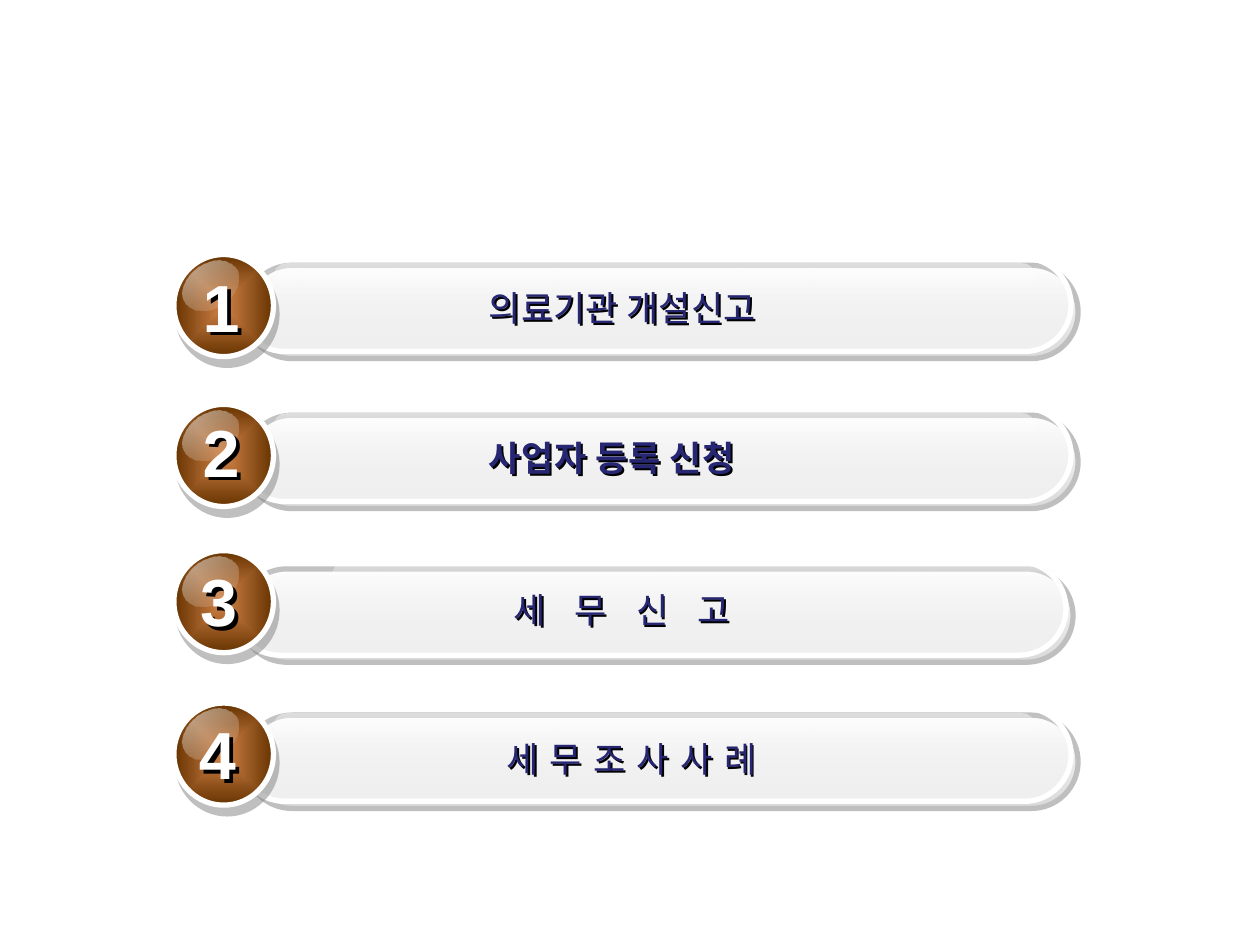
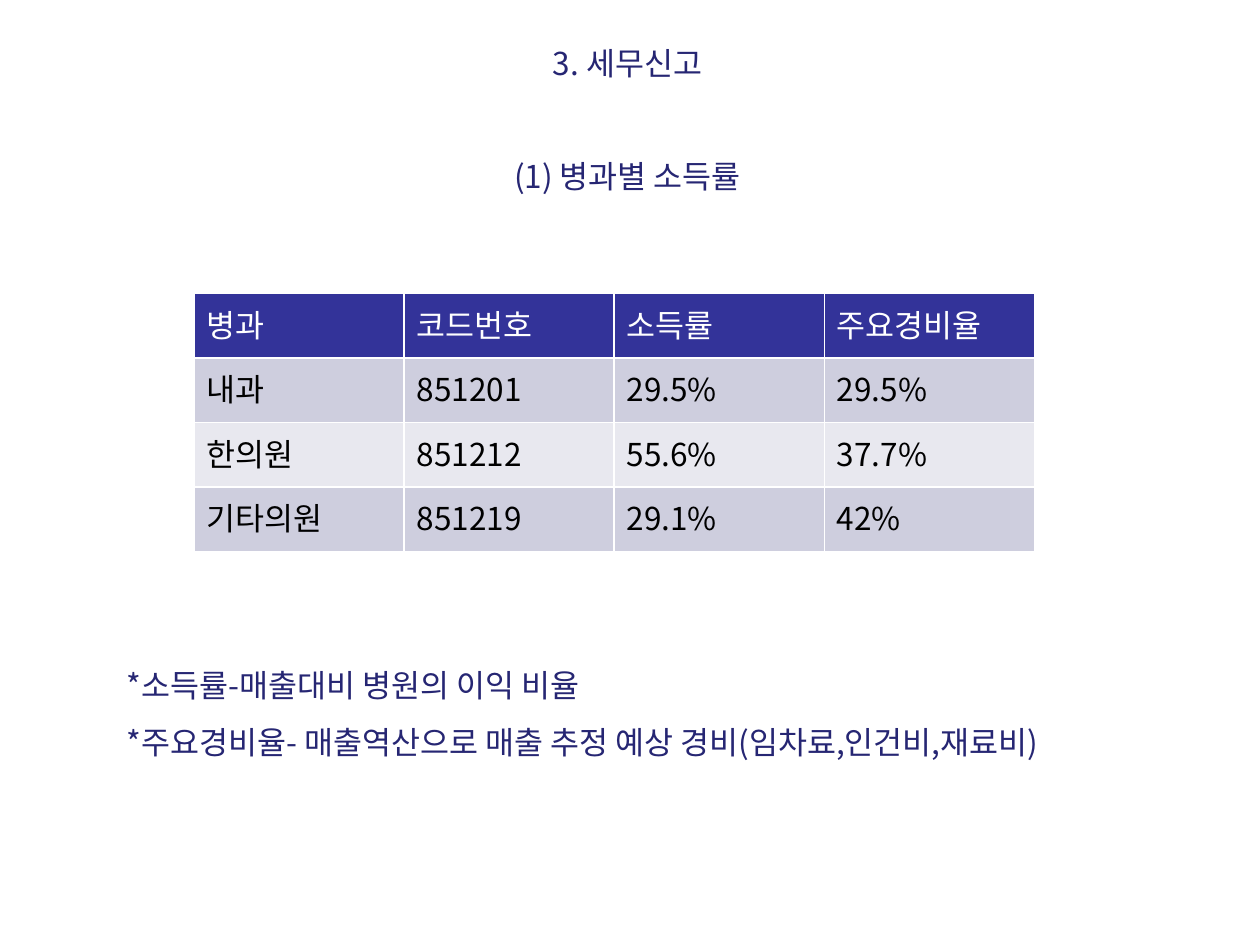
from dataclasses import dataclass

from lxml import etree
from pptx import Presentation
from pptx.dml.color import RGBColor
from pptx.enum.shapes import MSO_SHAPE
from pptx.enum.text import MSO_ANCHOR, PP_ALIGN
from pptx.oxml import parse_xml
from pptx.oxml.ns import nsdecls, qn
from pptx.util import Inches, Pt

WHITE = RGBColor(0xFF, 0xFF, 0xFF)
BLACK = RGBColor(0, 0, 0)
NAVY = RGBColor(0x26, 0x26, 0x73)
HEADER_BLUE = RGBColor(0x33, 0x33, 0x99)
BAND_DARK = RGBColor(0xCE, 0xCE, 0xDE)
BAND_LIGHT = RGBColor(0xE8, 0xE8, 0xEF)
COPPER = RGBColor(0xD1, 0x82, 0x47)
BROWN = RGBColor(0x66, 0x33, 0x00)
GREY = RGBColor(0x80, 0x80, 0x80)

KOREAN = "Noto Sans CJK KR"
LATIN = "Arial"
DOWNWARD = '<a:lin ang="5400000" scaled="0"/>'
FROM_CENTRE = ('<a:path path="shape"><a:fillToRect l="50000" t="50000" '
               'r="50000" b="50000"/></a:path>')


@dataclass
class Entry:
    """One agenda row; the offsets count from the top of its ball."""
    label: str
    top: float
    label_left: float
    label_drop: float = 0.2
    bold: bool = False
    spacing: float = 0
    bar_left: float = 1.89
    bar_drop: float = 0.03
    sheen_left: float = 2.17
    sheen_drop: float = 0.07
    number_left: float = 1.51
    number_drop: float = 0.03


ENTRIES = [
    Entry("의료기관 개설신고", 2.02, 3.78, spacing=0.1, number_drop=0.04),
    Entry("사업자 등록 신청", 3.21, 3.78, bold=True, spacing=0.3, number_drop=0),
    Entry("세 무 신 고", 4.37, 3.98, label_drop=0.25, spacing=6, bar_left=1.85,
          bar_drop=0.09, sheen_left=2.64, sheen_drop=0.09, number_left=1.49),
    Entry("세 무 조 사 사 례", 5.58, 3.92, label_drop=0.22, spacing=1,
          bar_drop=0.04, sheen_drop=0.08, number_left=1.48),
]

RATES = [
    ["병과", "코드번호", "소득률", "주요경비율"],
    ["내과", "851201", "29.5%", "29.5%"],
    ["한의원", "851212", "55.6%", "37.7%"],
    ["기타의원", "851219", "29.1%", "42%"],
]


def shadow_xml(colour, opacity, distance, angle):
    return parse_xml(
        f'<a:effectLst {nsdecls("a")}><a:outerShdw blurRad="0" dist="{Pt(distance)}" '
        f'dir="{angle * 60000}" algn="ctr" rotWithShape="0"><a:srgbClr val="{colour}">'
        f'<a:alpha val="{opacity * 1000}"/></a:srgbClr></a:outerShdw></a:effectLst>')


def gradient_xml(start, end, direction):
    """Each end is a colour with its opacity in percent."""
    stops = "".join(
        f'<a:gs pos="{position}"><a:srgbClr val="{colour}">'
        f'<a:alpha val="{opacity * 1000}"/></a:srgbClr></a:gs>'
        for position, (colour, opacity) in ((0, start), (100000, end)))
    return parse_xml(f'<a:gradFill {nsdecls("a")} rotWithShape="1">'
                     f'<a:gsLst>{stops}</a:gsLst>{direction}</a:gradFill>')


def add_glossy(page, kind, box, start, end, direction=DOWNWARD, shadow=None):
    """A gradient shape; one with a shadow also gets a white rim."""
    shape = page.shapes.add_shape(kind, *map(Inches, box))
    shape.shadow.inherit = False
    if kind == MSO_SHAPE.ROUNDED_RECTANGLE:
        shape.adjustments[0] = 0.5
    properties = shape.element.spPr
    properties.find(qn("a:prstGeom")).addnext(gradient_xml(start, end, direction))
    if shadow:
        shape.line.color.rgb = WHITE
        shape.line.width = Pt(3)
        properties.replace(properties.find(qn("a:effectLst")), shadow_xml(GREY, 50, *shadow))
    else:
        shape.line.fill.background()
    return shape


def style_run(span, font, size, colour, bold=False):
    span.font.size = Pt(size)
    span.font.bold = bold
    span.font.color.rgb = colour
    span.font.name = font
    east_asian = etree.Element(qn("a:ea"), typeface=font)
    span.font._element.find(qn("a:latin")).addnext(east_asian)


def add_text(page, box, lines, font, size, colour, bold=False, wrap=True):
    shape = page.shapes.add_textbox(*map(Inches, box))
    frame = shape.text_frame
    frame.word_wrap = wrap
    frame.text = "\n".join(lines)
    for para in frame.paragraphs:
        for span in para.runs:
            style_run(span, font, size, colour, bold)
    return shape


def add_shadowed_text(page, box, text, font, size, colour, bold, spacing=0):
    shape = add_text(page, box, [text], font, size, colour, bold, wrap=False)
    shape.element.spPr.append(shadow_xml(BLACK, 100, size * 0.08, 45))
    frame = shape.text_frame
    frame.vertical_anchor = MSO_ANCHOR.MIDDLE
    if spacing:
        frame.paragraphs[0].runs[0].font._element.set("spc", str(round(spacing * 100)))


def add_entry(page, number, entry):
    top = entry.top
    add_glossy(page, MSO_SHAPE.ROUNDED_RECTANGLE,
               (entry.bar_left, top + entry.bar_drop, 6.61, 0.74),
               (WHITE, 0), (WHITE, 60), shadow=(5.7, 45))
    add_glossy(page, MSO_SHAPE.ROUNDED_RECTANGLE,
               (entry.sheen_left, top + entry.sheen_drop, 6.04, 0.2),
               (WHITE, 49), (WHITE, 0))
    add_glossy(page, MSO_SHAPE.OVAL, (1.38, top, 0.79, 0.81),
               (COPPER, 100), (BROWN, 100), FROM_CENTRE, shadow=(5.4, 68))
    glint = add_glossy(page, MSO_SHAPE.OVAL, (1.43, top + 0.07, 0.48, 0.35),
                       (WHITE, 57), (WHITE, 0))
    glint.rotation = 323.8
    add_shadowed_text(page, (entry.number_left, top + entry.number_drop, 0.49, 0.73),
                      str(number), LATIN, 38, WHITE, True)
    add_shadowed_text(page, (entry.label_left, top + entry.label_drop, 2.4, 0.44),
                      entry.label, KOREAN, 20, NAVY, entry.bold, entry.spacing)


def add_cell_borders(cell):
    properties = cell._tc.get_or_add_tcPr()
    for index, side in enumerate(("lnL", "lnR", "lnT", "lnB")):
        properties.insert(index, parse_xml(
            f'<a:{side} {nsdecls("a")} w="{Pt(1)}"><a:solidFill>'
            f'<a:srgbClr val="{WHITE}"/></a:solidFill></a:{side}>'))


def add_rate_table(page, box):
    table = page.shapes.add_table(len(RATES), len(RATES[0]), *map(Inches, box)).table
    for row, values in enumerate(RATES):
        header = row == 0
        fill = HEADER_BLUE if header else (BAND_DARK if row % 2 else BAND_LIGHT)
        for column, value in enumerate(values):
            cell = table.cell(row, column)
            cell.text = value
            cell.vertical_anchor = MSO_ANCHOR.MIDDLE
            cell.margin_bottom = Inches(0.09)
            cell.fill.solid()
            cell.fill.fore_color.rgb = fill
            add_cell_borders(cell)
            style_run(cell.text_frame.paragraphs[0].runs[0], KOREAN, 18,
                      WHITE if header else BLACK)


def build_agenda(page):
    for number, entry in enumerate(ENTRIES, 1):
        add_entry(page, number, entry)


def build_income_rates(page):
    heading = add_text(page, (2.48, 0.3, 5, 1.32), ["3. 세무신고", "(1) 병과별 소득률"],
                       KOREAN, 18, NAVY).text_frame
    for para in heading.paragraphs:
        para.alignment = PP_ALIGN.CENTER
    heading.paragraphs[1].space_before = Pt(43)

    add_rate_table(page, (1.54, 2.33, 6.67, 2.05))

    notes = add_text(page, (0.91, 5.09, 8.27, 0.94),
                     ["*소득률-매출대비 병원의 이익 비율",
                      "*주요경비율- 매출역산으로 매출 추정 예상 경비(임차료,인건비,재료비)"],
                     KOREAN, 18, NAVY).text_frame
    for para in notes.paragraphs:
        para.line_spacing = 1.5


def main():
    deck = Presentation()
    deck.slide_width, deck.slide_height = Inches(10), Inches(7.5)
    for build in (build_agenda, build_income_rates):
        build(deck.slides.add_slide(deck.slide_layouts[6]))
    deck.save("out.pptx")


if __name__ == "__main__":
    main()
